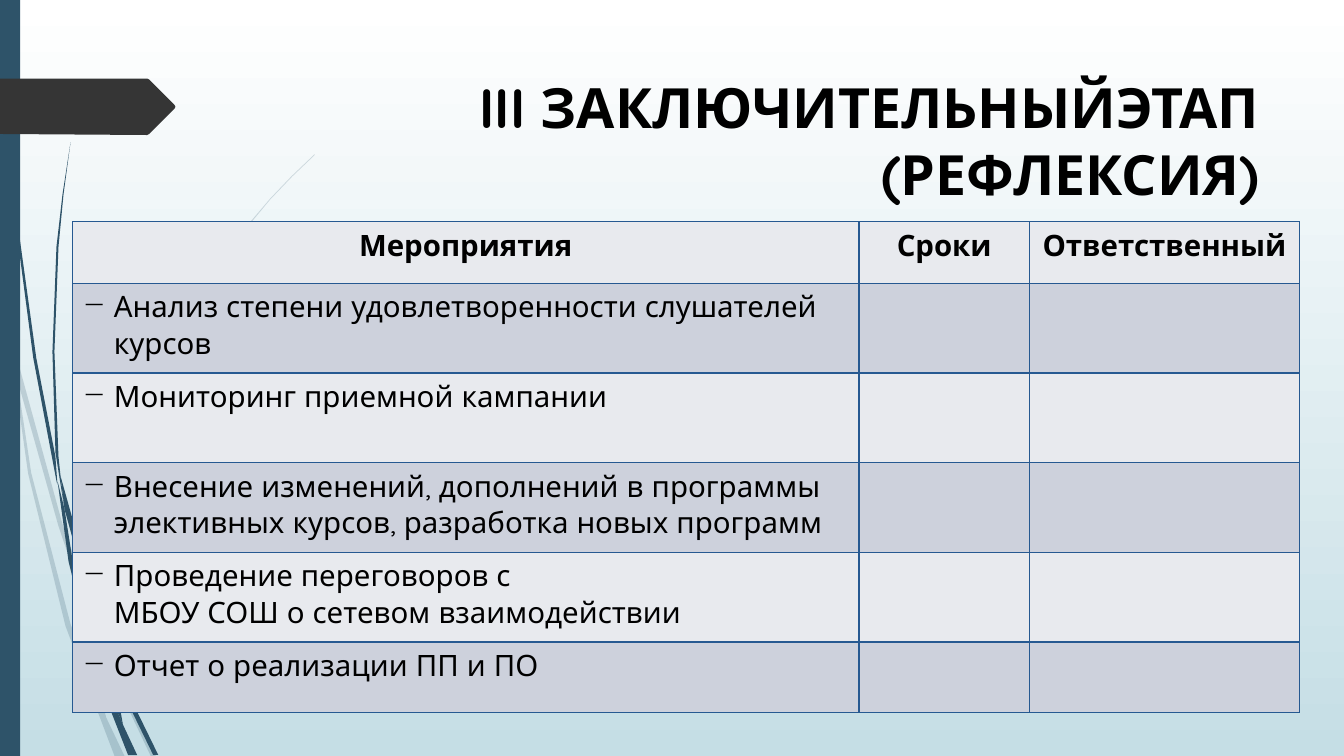
import pptx
import pptx.dml.color
import pptx.enum.shapes
import pptx.enum.text
import pptx.oxml
import pptx.oxml.ns
import pptx.util

PX = 9144
FONT = "Quicksand"
COLORS = {
    "sky_top": "FFFFFF", "sky_bottom": "C5DEE5", "stem": "2E5369", "arrow": "353535",
    "text": "000000", "border": "265991", "light": "E8EAEE", "dark": "CDD1DC",
}
TITLE = "III ЗАКЛЮЧИТЕЛЬНЫЙЭТАП\n(РЕФЛЕКСИЯ)"
HEADER = ["Мероприятия", "Сроки", "Ответственный"]
ACTIVITIES = [
    "Анализ степени удовлетворенности слушателей курсов",
    "Мониторинг приемной кампании",
    "Внесение изменений, дополнений в программы элективных курсов, разработка новых программ",
    "Проведение переговоров с\nМБОУ СОШ о сетевом взаимодействии",
    "Отчет о реализации ПП и ПО",
]
COLUMNS = [780, 169, 268]
ROWS = [61, 89, 89, 89, 89, 70]
TABLE_LEFT, TABLE_TOP = 72, 220
HANG = 31

PALE_STEMS = [
    [(11, 350), (9, 322), (0, 282), (0, 299), (10, 344)],
    [(58, 522), (84, 599), (85, 586), (62, 520), (14, 345), (17, 376)],
    [(92, 607), (88, 596), (88, 610), (123, 694), (150, 751), (155, 751), (127, 692)],
    [(93, 683), (70, 619), (31, 469), (17, 376), (11, 350), (28, 470), (65, 621), (92, 693),
     (114, 751), (124, 751), (105, 711)],
    [(84, 599), (87, 646), (93, 683), (105, 711), (91, 646), (88, 610)],
    [(88, 584), (110, 462), (160, 349), (229, 245), (268, 198), (290, 175), (312, 154), (312, 153),
     (289, 175), (268, 197), (228, 244), (158, 348), (107, 461), (85, 584), (84, 599), (88, 610)],
]
SOLID_STEMS = [
    [(7, 110), (17, 233), (33, 355), (56, 477), (57, 481), (55, 453), (36, 355), (19, 232),
     (8, 109), (5, 48), (4, 0), (3, 0), (4, 48)],
    [(88, 592), (106, 645), (106, 631), (93, 590), (60, 472), (64, 505)],
    [(113, 649), (110, 641), (111, 656), (132, 708), (152, 749), (157, 749), (136, 706)],
    [(110, 691), (98, 657), (72, 556), (64, 505), (57, 477), (68, 557), (93, 659), (111, 708),
     (127, 749), (136, 749), (122, 719)],
    [(60, 472), (58, 453), (54, 349), (58, 245), (63, 193), (70, 141), (62, 193), (56, 245),
     (52, 349), (55, 449), (64, 505)],
    [(111, 633), (125, 552), (158, 476), (205, 406), (231, 374), (245, 359), (261, 344), (260, 344),
     (245, 358), (231, 373), (204, 405), (156, 474), (122, 551), (106, 631), (106, 645), (111, 656)],
    [(106, 645), (110, 691), (122, 719), (111, 656)],
]
ARROW = [(0, 78), (146, 78), (148, 79), (173, 104), (174, 106), (173, 108), (148, 133), (146, 134), (0, 133)]


def px(n):
    return pptx.util.Emu(n * PX)


def rgb(name):
    return pptx.dml.color.RGBColor.from_string(COLORS[name])


def paint(sp, color, alpha=None):
    sp.shadow.inherit = False
    sp.fill.solid()
    sp.fill.fore_color.rgb = rgb(color)
    sp.line.fill.background()
    if alpha:
        clr = sp._element.spPr.find(".//" + pptx.oxml.ns.qn("a:srgbClr"))
        clr.append(pptx.oxml.parse_xml(f'<a:alpha {pptx.oxml.ns.nsdecls("a")} val="{alpha * 1000}"/>'))


def outline(shapes, points):
    fb = shapes.build_freeform(*points[0], scale=PX)
    fb.add_line_segments(points[1:], close=True)
    return fb.convert_to_shape()


def write(p, text, size, bold, align):
    p.text = text.replace("\n", "\v")
    p.alignment = align
    for r in p.runs:
        r.font.name = FONT
        r.font.size = pptx.util.Pt(size)
        r.font.bold = bold
        r.font.color.rgb = rgb("text")


def add_bullet(p):
    pPr = p._p.get_or_add_pPr()
    pPr.set("marL", str(px(HANG)))
    pPr.set("indent", str(px(-HANG)))
    pPr.append(pptx.oxml.parse_xml(f'<a:buChar {pptx.oxml.ns.nsdecls("a")} char="−"/>'))


def style_cell(cell, color):
    cell.fill.solid()
    cell.fill.fore_color.rgb = rgb(color)
    tcPr = cell._tc.get_or_add_tcPr()
    for i, side in enumerate("LRTB"):
        tcPr.insert(i, pptx.oxml.parse_xml(
            f'<a:ln{side} {pptx.oxml.ns.nsdecls("a")} w="12700"><a:solidFill>'
            f'<a:srgbClr val="{COLORS["border"]}"/></a:solidFill></a:ln{side}>'))


def main():
    prs = pptx.Presentation()
    prs.slide_width, prs.slide_height = px(1333), px(750)
    slide = prs.slides.add_slide(prs.slide_layouts[6])
    shapes = slide.shapes
    align = pptx.enum.text.PP_ALIGN

    fill = slide.background.fill
    fill.gradient()
    fill.gradient_angle = 270
    for stop, name, position in zip(fill.gradient_stops, ("sky_top", "sky_bottom"), (0, 1)):
        stop.color.rgb = rgb(name)
        stop.position = position

    for stems, alpha in ((PALE_STEMS, 20), (SOLID_STEMS, None)):
        for stem in stems:
            paint(outline(shapes, stem), "stem", alpha)
    paint(shapes.add_shape(pptx.enum.shapes.MSO_SHAPE.RECTANGLE, 0, 0, px(20), px(750)), "stem")
    paint(outline(shapes, ARROW), "arrow")

    tf = shapes.add_textbox(px(284), px(68), px(975), px(140)).text_frame
    tf.word_wrap = True
    tf.vertical_anchor = pptx.enum.text.MSO_ANCHOR.TOP
    write(tf.paragraphs[0], TITLE, 39.6, True, align.RIGHT)

    table = shapes.add_table(len(ROWS), len(COLUMNS), px(TABLE_LEFT), px(TABLE_TOP),
                             px(sum(COLUMNS)), px(sum(ROWS))).table
    for column, width in zip(table.columns, COLUMNS):
        column.width = px(width)
    for i, height in enumerate(ROWS):
        table.rows[i].height = px(height)
        for cell in table.rows[i].cells:
            style_cell(cell, "dark" if i % 2 else "light")
    for j, text in enumerate(HEADER):
        write(table.cell(0, j).text_frame.paragraphs[0], text, 21, True, align.CENTER)
    for i, text in enumerate(ACTIVITIES, 1):
        p = table.cell(i, 0).text_frame.paragraphs[0]
        write(p, text, 21, False, align.LEFT)
        add_bullet(p)

    prs.save("out.pptx")


if __name__ == "__main__":
    main()
